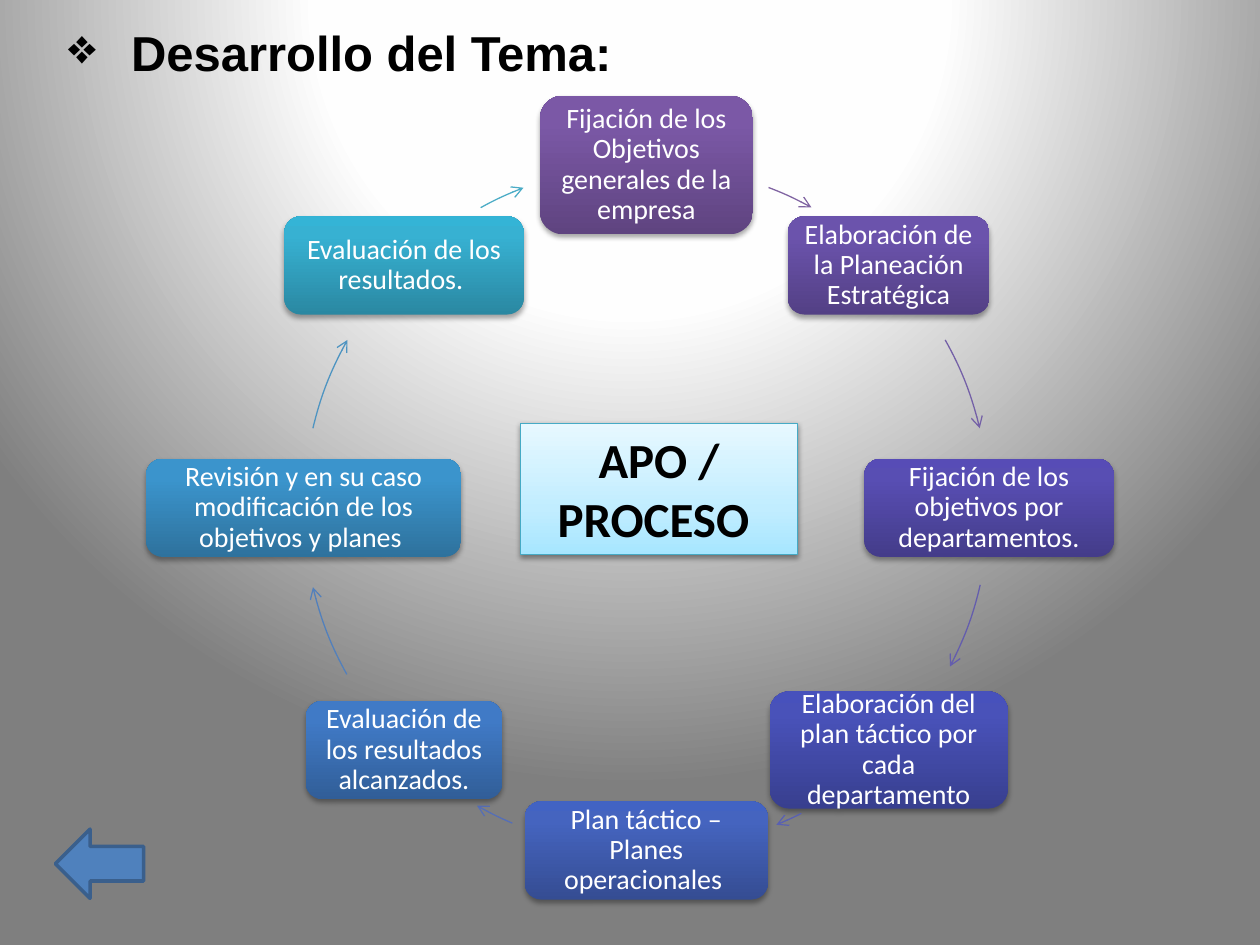
"""Build the slide on the management-by-objectives cycle."""
import math

from pptx import Presentation
from pptx.dml.color import RGBColor
from pptx.enum import shapes, text
from pptx.oxml import parse_xml
from pptx.oxml.ns import nsdecls, qn
from pptx.util import Inches, Pt

THEME = {
    "heading_font": "Arial", "body_font": "Calibri",
    "heading_size": 28, "step_size": 16,
    "dark": "000000", "light": "FFFFFF",
    "background": [(0, "FFFFFF"), (40, "FEFEFE"), (100, "7F7F7F")],
    "center": [(0, "A7E6FF"), (35, "C1EDFF"), (100, "E7F8FF")],
    "center_line": "46AAC5", "back": "4F81BD", "back_line": "3A5F8C",
}
TITLE = "Desarrollo del Tema:"
CENTER = "APO / PROCESO "
STEPS = [
    ("Fijación de los Objetivos generales de la empresa", (1.69, 1.1),
     ("5F4480", "7B58A6", "7C57A8"), (290.9, 298.8), "8064A2"),
    ("Elaboración de la Planeación Estratégica", (1.6, 0.78),
     ("534085", "6B53AC", "6B52AF"), (330.7, 346.6), "7460A7"),
    ("Fijación de los objetivos por departamentos.", (1.98, 0.78),
     ("443C8A", "584EB3", "574CB6"), (13, 27.6), "645DAD"),
    ("Elaboración del plan táctico por cada departamento", (1.89, 0.93),
     ("383F8F", "4952B9", "4751BC"), (63.1, 67.7), "5960B2"),
    ("Plan táctico – Planes operacionales ", (1.93, 0.78),
     ("354D93", "4564BF", "4263C3"), (113, 119.6), "556EB7"),
    ("Evaluación de los resultados alcanzados.", (1.56, 0.78),
     ("315E98", "407AC6", "3E7AC9"), (150.9, 166.6), "5280BC"),
    ("Revisión y en su caso modificación de los objetivos y planes ", (2.5, 0.78),
     ("2E729D", "3B94CC", "3995CF"), (193.4, 209.3), "4E94C1"),
    ("Evaluación de los resultados. ", (1.9, 0.78),
     ("2A88A2", "37B1D2", "34B4D6"), (241.1, 249), "4BACC6"),
]
RING_X, RING_Y, RADIUS = 5.13, 4.03, 2.72
UPWARD = '<a:lin ang="16200000" scaled="0"/>'
RADIAL = '<a:path path="circle"><a:fillToRect l="50000" t="-80000" r="50000" b="180000"/></a:path>'


def set_gradient(fill, properties, stops, direction):
    fill.solid()
    marks = "".join(f'<a:gs pos="{position * 1000}"><a:srgbClr val="{color}"/></a:gs>'
                    for position, color in stops)
    gradient = parse_xml(f'<a:gradFill {nsdecls("a")} rotWithShape="1">'
                         f'<a:gsLst>{marks}</a:gsLst>{direction}</a:gradFill>')
    properties.replace(properties.find(qn("a:solidFill")), gradient)


def set_shadow(shape, opacity, distance):
    effects = shape._element.spPr.find(qn("a:effectLst"))
    effects.append(parse_xml(
        f'<a:outerShdw {nsdecls("a")} blurRad="{Pt(3.1)}" dist="{Pt(distance)}" dir="5400000" '
        f'rotWithShape="0"><a:srgbClr val="000000"><a:alpha val="{opacity * 1000}"/>'
        '</a:srgbClr></a:outerShdw>'))


def set_line(shape, color, width):
    shape.line.color.rgb = RGBColor.from_string(color)
    shape.line.width = Pt(width)


def add_shape(slide, kind, left, top, width, height):
    shape = slide.shapes.add_shape(kind, *map(Inches, (left, top, width, height)))
    shape.shadow.inherit = False
    return shape


def write(shape, words, font, size, color, bold, align, anchor):
    frame = shape.text_frame
    frame.text = words
    frame.word_wrap = True
    frame.vertical_anchor = anchor
    paragraph = frame.paragraphs[0]
    paragraph.alignment = align
    run_font = paragraph.runs[0].font
    run_font.name, run_font.size, run_font.bold = font, Pt(size), bold
    run_font.color.rgb = RGBColor.from_string(color)
    return paragraph


def add_title(slide):
    title = slide.shapes.title
    title.left, title.top, title.width, title.height = map(Inches, (0.44, 0.13, 9.21, 1.45))
    paragraph = write(title, TITLE, THEME["heading_font"], THEME["heading_size"], THEME["dark"],
                      True, text.PP_ALIGN.LEFT, text.MSO_ANCHOR.TOP)
    properties = paragraph._p.get_or_add_pPr()
    properties.set("marL", str(Inches(0.5)))
    properties.set("indent", str(Inches(-0.5)))
    properties.append(parse_xml(f'<a:buChar {nsdecls("a")} char="❖"/>'))


def add_center(slide):
    center = add_shape(slide, shapes.MSO_SHAPE.RECTANGLE, 4.13, 3.36, 2.2, 1.04)
    set_gradient(center.fill, center._element.spPr, THEME["center"], UPWARD)
    set_line(center, THEME["center_line"], 0.75)
    set_shadow(center, 38, 1.6)
    write(center, CENTER, THEME["body_font"], THEME["heading_size"], THEME["dark"],
          True, text.PP_ALIGN.CENTER, text.MSO_ANCHOR.TOP)


def add_step(slide, index, words, size, colors):
    angle = math.radians(index * 360 / len(STEPS) - 90)
    width, height = size
    left = RING_X + RADIUS * math.cos(angle) - width / 2
    top = RING_Y + RADIUS * math.sin(angle) - height / 2
    box = add_shape(slide, shapes.MSO_SHAPE.ROUNDED_RECTANGLE, left, top, width, height)
    set_gradient(box.fill, box._element.spPr, zip((0, 80, 100), colors), UPWARD)
    box.line.fill.background()
    set_shadow(box, 35, 1.8)
    paragraph = write(box, words, THEME["body_font"], THEME["step_size"], THEME["light"],
                      False, text.PP_ALIGN.CENTER, text.MSO_ANCHOR.MIDDLE)
    paragraph.line_spacing = 0.9
    frame = box.text_frame
    frame.margin_left = frame.margin_right = frame.margin_top = frame.margin_bottom = Inches(0.03)


def add_arc(slide, angles, color):
    arc = add_shape(slide, shapes.MSO_SHAPE.ARC, RING_X - RADIUS, RING_Y - RADIUS,
                    2 * RADIUS, 2 * RADIUS)
    for position, angle in enumerate(angles):
        arc.adjustments[position] = angle * 0.6
    arc.fill.background()
    set_line(arc, color, 0.75)
    arc.line._get_or_add_ln().append(parse_xml(f'<a:tailEnd {nsdecls("a")} type="arrow"/>'))


def add_back_arrow(slide):
    arrow = add_shape(slide, shapes.MSO_SHAPE.LEFT_ARROW, 0.44, 6.58, 0.7, 0.55)
    arrow.fill.solid()
    arrow.fill.fore_color.rgb = RGBColor.from_string(THEME["back"])
    set_line(arrow, THEME["back_line"], 2)


def main():
    presentation = Presentation()
    presentation.slide_width, presentation.slide_height = Inches(10), Inches(7.5)
    slide = presentation.slides.add_slide(presentation.slide_layouts[5])
    background = slide.background.fill
    background.solid()
    set_gradient(background, slide._element.cSld.find(qn("p:bg")).find(qn("p:bgPr")),
                 THEME["background"], RADIAL)
    add_title(slide)
    add_center(slide)
    for index, (words, size, colors, angles, arc_color) in enumerate(STEPS):
        add_step(slide, index, words, size, colors)
        add_arc(slide, angles, arc_color)
    add_back_arrow(slide)
    presentation.save("out.pptx")


if __name__ == "__main__":
    main()
